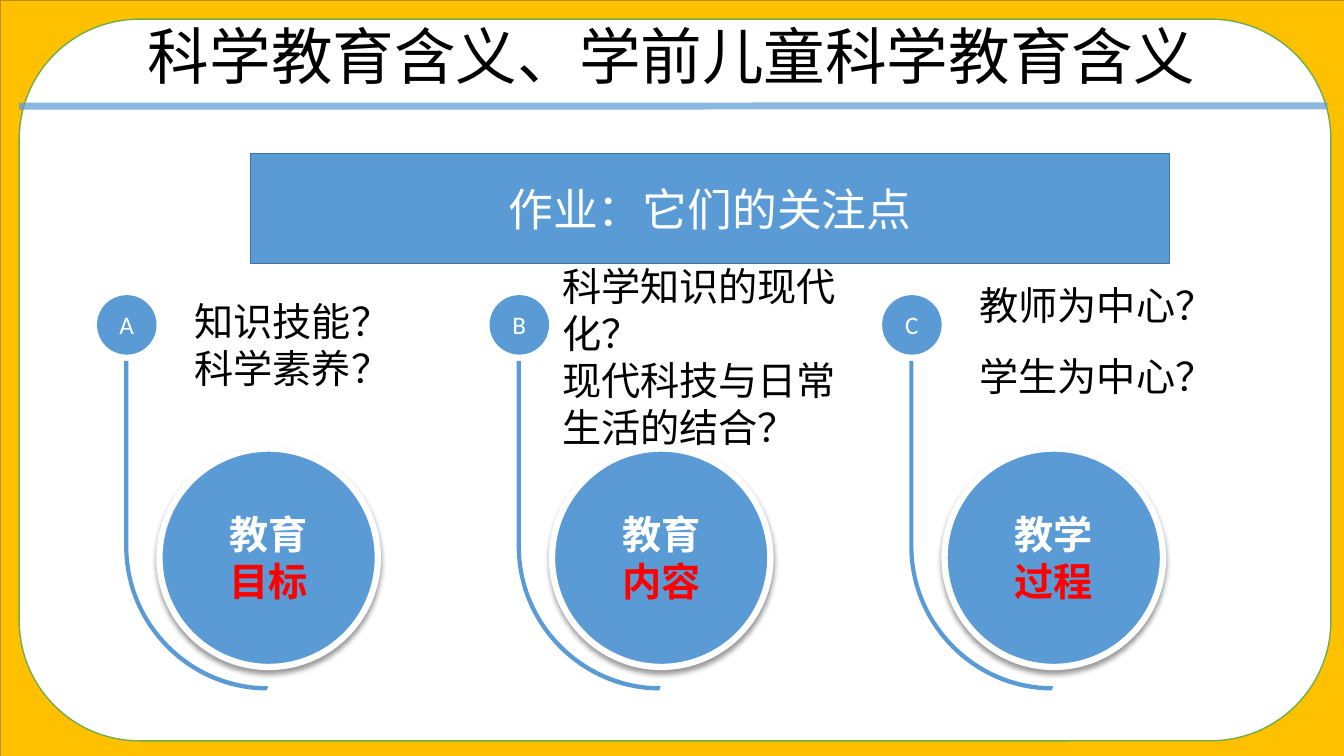
from dataclasses import dataclass

from lxml import etree
from pptx import Presentation
from pptx.dml.color import RGBColor
from pptx.enum.shapes import MSO_CONNECTOR, MSO_SHAPE
from pptx.enum.text import MSO_ANCHOR, MSO_AUTO_SIZE, PP_ALIGN
from pptx.oxml.ns import qn
from pptx.util import Pt

RECT, ROUND_RECT, OVAL = MSO_SHAPE.RECTANGLE, MSO_SHAPE.ROUNDED_RECTANGLE, MSO_SHAPE.OVAL
STRAIGHT = MSO_CONNECTOR.STRAIGHT
LEFT, CENTER = PP_ALIGN.LEFT, PP_ALIGN.CENTER
MIDDLE = MSO_ANCHOR.MIDDLE
NO_FIT = MSO_AUTO_SIZE.NONE
TITLE_ONLY = 5


@dataclass(frozen=True)
class Theme:
    amber: str = "FFC000"
    amber_edge: str = "BD8E00"
    green: str = "70AD47"
    blue: str = "5B9BD5"
    blue_edge: str = "43739E"
    white: str = "FFFFFF"
    badge_text: str = "FEFFFF"
    black: str = "000000"
    red: str = "FF0000"
    heading_font: str = "Calibri"
    body_font: str = "Arial"
    title_size: int = 44
    banner_size: int = 32
    body_size: int = 28
    badge_size: int = 18


THEME = Theme()
COLUMN_LEFT, COLUMN_PITCH = 69.3, 280.4
CIRCLE_HANDLE = 0.55

COLUMNS = [
    ("A", ("教育", "目标"), ("知识技能？", "科学素养？"), (131.8, 171.4, 198, 149), None),
    ("B", ("教育", "内容"), ("科学知识的现代化？", "现代科技与日常生活的结合？"),
     (394.4, 188.2, 235.4, 132.5), None),
    ("C", ("教学", "过程"), ("教师为中心？", "学生为中心？"), (692.6, 149, 211, 171.4), 1.5),
]


def rgb(value):
    return RGBColor.from_string(value)


def points(*lengths):
    return [Pt(length) for length in lengths]


def write(frame, *lines, size, colors, font=THEME.heading_font, bold=False,
          align=CENTER, spacing=None):
    frame.word_wrap = True
    frame.auto_size = NO_FIT
    frame.vertical_anchor = MIDDLE
    for index, line in enumerate(lines):
        paragraph = frame.paragraphs[0] if index == 0 else frame.add_paragraph()
        paragraph.alignment = align
        if spacing:
            paragraph.line_spacing = spacing
        run = paragraph.add_run()
        run.text = line
        run.font.name = font
        run.font.size = Pt(size)
        run.font.bold = bold
        run.font.color.rgb = rgb(colors[index % len(colors)])


def paint(shape, fill, edge=None, width=1):
    shape.shadow.inherit = False
    shape.fill.solid()
    shape.fill.fore_color.rgb = rgb(fill)
    if edge:
        shape.line.color.rgb = rgb(edge)
        shape.line.width = Pt(width)
    else:
        shape.line.fill.background()


def add_panel(slide, kind, box, fill, edge=None, width=1):
    panel = slide.shapes.add_shape(kind, *points(*box))
    paint(panel, fill, edge, width)
    return panel


def add_drop_shadow(shape):
    effects = shape.element.spPr.find(qn("a:effectLst"))
    shadow = etree.SubElement(effects, qn("a:outerShdw"), blurRad=str(Pt(4)),
                              dist=str(Pt(3)), dir="5400000", rotWithShape="0")
    color = etree.SubElement(shadow, qn("a:srgbClr"), val=THEME.black)
    etree.SubElement(color, qn("a:alpha"), val="40000")


def add_title(slide, text):
    title = slide.shapes.title
    title.left, title.top, title.width, title.height = points(-5, 14.4, 970, 60.5)
    title.text_frame.margin_bottom = Pt(7.8)
    write(title.text_frame, text, size=THEME.title_size, colors=[THEME.black], spacing=0.9)
    title.element.getparent().append(title.element)


def add_rule(slide):
    rule = slide.shapes.add_connector(STRAIGHT, *points(13.7, 75.9, 948.2, 75.6))
    rule.line.color.rgb = rgb(THEME.blue)
    rule.line.width = Pt(5)
    properties = rule.element.spPr
    color = next(properties.iter(qn("a:srgbClr")))
    etree.SubElement(color, qn("a:alpha"), val="69000")
    etree.SubElement(properties, qn("a:effectLst"))


def bend_segments(shape, first):
    segments = list(shape.element.spPr.iter(qn("a:lnTo")))[first:first + 3]
    curve = etree.Element(qn("a:cubicBezTo"))
    segments[0].addprevious(curve)
    for segment in segments:
        curve.append(segment[0])
        segment.getparent().remove(segment)


def add_hook(slide, left, top):
    stem, outer, inner = 132.6, 102.8, 99.8
    thickness = outer - inner
    inner_handle, outer_handle = inner * CIRCLE_HANDLE, outer * CIRCLE_HANDLE
    outline = [
        (thickness, 0), (thickness, stem),
        (thickness, stem + inner_handle), (outer - inner_handle, stem + inner),
        (outer, stem + inner),
        (outer - 1, stem + outer),
        (outer - outer_handle, stem + outer), (0, stem + outer_handle), (0, stem),
    ]
    builder = slide.shapes.build_freeform(Pt(left), Pt(top), scale=1.0)
    builder.add_line_segments([(Pt(left + x), Pt(top + y)) for x, y in outline], close=True)
    hook = builder.convert_to_shape()
    bend_segments(hook, 6)
    bend_segments(hook, 2)
    paint(hook, THEME.blue)


def add_column(slide, left, letter, topic, questions, question_box, spacing):
    add_hook(slide, left + 19.4, 257.8)
    badge = add_panel(slide, OVAL, (left, 210.8, 42.5, 42.5), THEME.blue)
    write(badge.text_frame, letter, size=THEME.badge_size, colors=[THEME.badge_text])
    disc = add_panel(slide, OVAL, (left + 44.6, 320.4, 156, 156), THEME.blue, THEME.white, 4.5)
    add_drop_shadow(disc)
    write(disc.text_frame, *topic, size=THEME.body_size, bold=True,
          colors=[THEME.white, THEME.red])
    note = slide.shapes.add_textbox(*points(*question_box))
    write(note.text_frame, *questions, size=THEME.body_size, font=THEME.body_font,
          colors=[THEME.black], align=LEFT, spacing=spacing)


def main():
    deck = Presentation()
    deck.slide_width, deck.slide_height = points(960, 540)
    slide = deck.slides.add_slide(deck.slide_layouts[TITLE_ONLY])
    add_panel(slide, RECT, (0, 0, 964.8, 540.7), THEME.amber, THEME.amber_edge)
    add_panel(slide, ROUND_RECT, (13.7, 13.7, 937, 515.5), THEME.white, THEME.green)
    add_title(slide, "科学教育含义、学前儿童科学教育含义")
    for index, column in enumerate(COLUMNS):
        add_column(slide, COLUMN_LEFT + index * COLUMN_PITCH, *column)
    banner = add_panel(slide, RECT, (178.9, 109.6, 656.6, 78.5), THEME.blue, THEME.blue_edge)
    write(banner.text_frame, "作业：它们的关注点", size=THEME.banner_size, colors=[THEME.white])
    add_rule(slide)
    deck.save("out.pptx")


if __name__ == "__main__":
    main()
